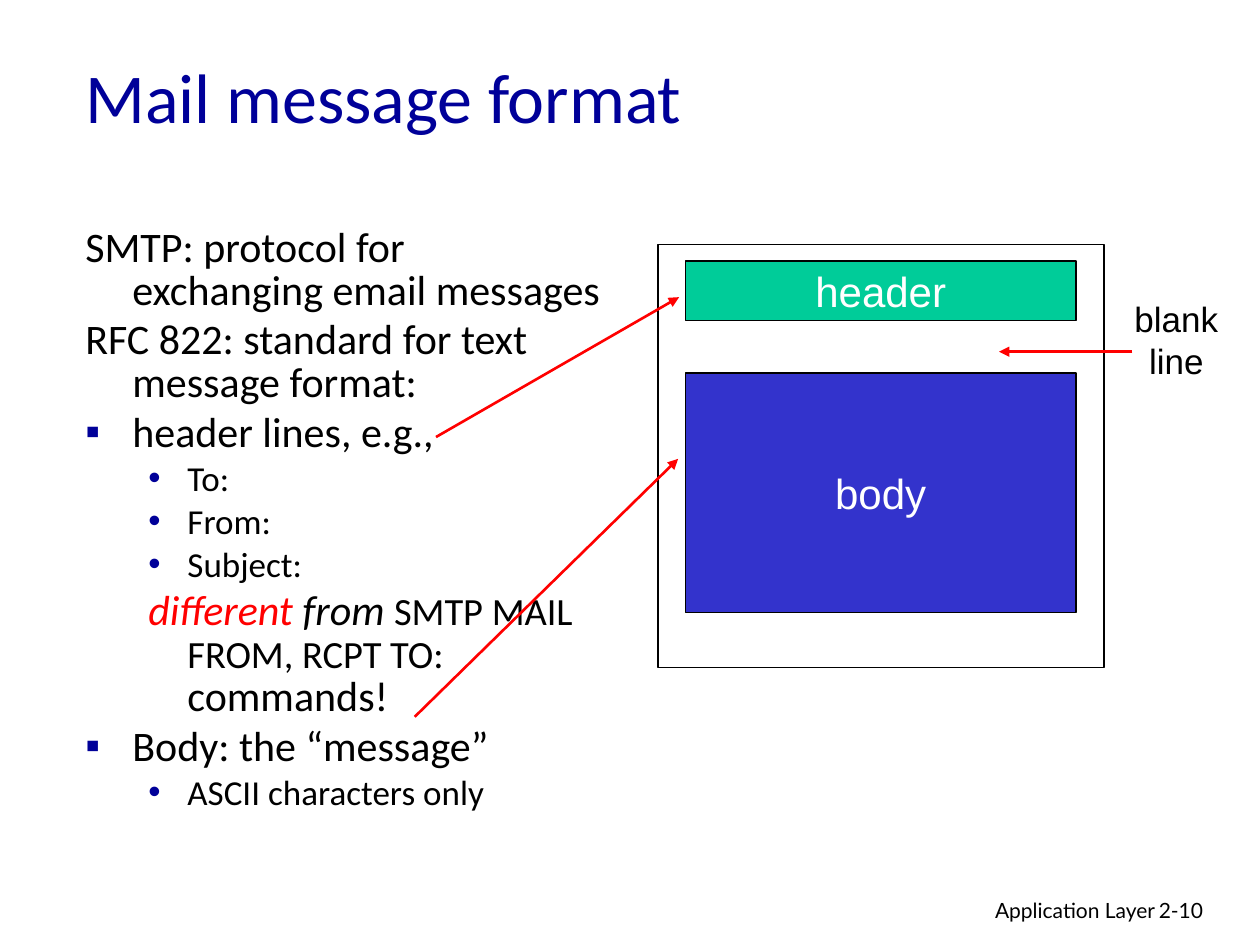
from lxml.etree import SubElement
from pptx import Presentation
from pptx.dml.color import RGBColor
from pptx.enum.shapes import MSO_CONNECTOR, MSO_SHAPE
from pptx.enum.text import MSO_ANCHOR, PP_ALIGN
from pptx.oxml.ns import qn
from pptx.util import Cm, Pt

BLACK = RGBColor(0x00, 0x00, 0x00)
WHITE = RGBColor(0xFF, 0xFF, 0xFF)
NAVY = RGBColor(0x00, 0x00, 0x99)
RED = RGBColor(0xFF, 0x00, 0x00)
GREEN = RGBColor(0x00, 0xCC, 0x99)
BLUE = RGBColor(0x33, 0x33, 0xCC)

TITLE = {"name": "Calibri", "size": Pt(40), "color": NAVY}
MAIN = {"name": "Calibri", "size": Pt(24), "color": BLACK}
SUB = {**MAIN, "size": Pt(20)}
COMMAND = {**MAIN, "size": Pt(22)}
ITALIC = {**MAIN, "italic": True}
WARNING = {**ITALIC, "color": RED}
BLOCK = {"name": "Arial", "size": Pt(24), "color": WHITE}
LABEL = {"name": "Arial", "size": Pt(20), "color": BLACK}
FOOTER = {"name": "Lato", "size": Pt(12), "color": BLACK}

# Left margin and hanging indent of each outline level
INDENTS = [(Cm(0.95), Cm(-0.95)), (Cm(2.06), Cm(-0.79))]

# Level, bullet, spans of text with their format
OUTLINE = [
    (0, None, [("SMTP: protocol for exchanging email messages", MAIN)]),
    (0, None, [("RFC 822: standard for text message format:", MAIN)]),
    (0, "▪", [("header lines, e.g.,", MAIN)]),
    (1, "•", [("To:", SUB)]),
    (1, "•", [("From:", SUB)]),
    (1, "•", [("Subject:", SUB)]),
    (1, None, [("different ", WARNING), ("from ", ITALIC),
               ("SMTP MAIL FROM, RCPT TO:", COMMAND), (" commands!", MAIN)]),
    (0, "▪", [("Body: the “message”", MAIN)]),
    (1, "•", [("ASCII characters only", SUB)]),
]


def add_span(para, text, style):
    span = para.add_run()
    span.text = text
    for name, value in style.items():
        if name == "color":
            span.font.color.rgb = value
        else:
            setattr(span.font, name, value)


def fill_lines(frame, lines, style, align):
    for index, line in enumerate(lines):
        para = frame.add_paragraph() if index else frame.paragraphs[0]
        para.alignment = align
        add_span(para, line, style)


def add_text(page, place, lines, style, align=PP_ALIGN.LEFT,
             anchor=MSO_ANCHOR.TOP, wrap=True):
    frame = page.shapes.add_textbox(*map(Cm, place)).text_frame
    frame.word_wrap = wrap
    frame.vertical_anchor = anchor
    fill_lines(frame, lines, style, align)


def set_bullet(para, level, bullet):
    """Give a paragraph its hanging indent and its bullet, if any."""
    properties = para._p.get_or_add_pPr()
    left, hanging = INDENTS[level]
    properties.set("marL", str(left))
    properties.set("indent", str(hanging))
    if bullet is None:
        SubElement(properties, qn("a:buNone"))
        return
    color = SubElement(properties, qn("a:buClr"))
    SubElement(color, qn("a:srgbClr"), val=str(NAVY))
    SubElement(properties, qn("a:buFont"), typeface="Arial")
    SubElement(properties, qn("a:buChar"), char=bullet)


def add_outline(page, place, items):
    frame = page.shapes.add_textbox(*map(Cm, place)).text_frame
    frame.word_wrap = True
    for index, (level, bullet, spans) in enumerate(items):
        para = frame.add_paragraph() if index else frame.paragraphs[0]
        set_bullet(para, level, bullet)
        para.level = level
        para.line_spacing = 0.85
        para.space_before = Pt(4 if index else 0)
        for text, style in spans:
            add_span(para, text, style)


def add_block(page, place, fill=None, text=None, weight=0.75):
    box = page.shapes.add_shape(MSO_SHAPE.RECTANGLE, *map(Cm, place))
    box.shadow.inherit = False
    box.line.color.rgb = BLACK
    box.line.width = Pt(weight)
    if fill is None:
        box.fill.background()
    else:
        box.fill.solid()
        box.fill.fore_color.rgb = fill
    if text:
        box.text_frame.word_wrap = False
        box.text_frame.vertical_anchor = MSO_ANCHOR.MIDDLE
        fill_lines(box.text_frame, [text], BLOCK, PP_ALIGN.CENTER)


def add_arrow(page, *ends):
    arrow = page.shapes.add_connector(MSO_CONNECTOR.STRAIGHT, *map(Cm, ends))
    arrow.line.color.rgb = RED
    arrow.line.width = Pt(1.5)
    SubElement(arrow.line._get_or_add_ln(), qn("a:tailEnd"), type="triangle")
    SubElement(arrow._element.spPr, qn("a:effectLst"))


def main():
    deck = Presentation()
    deck.slide_width, deck.slide_height = Cm(25.4), Cm(19.05)
    page = deck.slides.add_slide(deck.slide_layouts[6])

    add_text(page, (15.49, 17.96, 8.05, 0.79), ["Application Layer"], FOOTER,
             align=PP_ALIGN.RIGHT)
    add_text(page, (23.11, 17.96, 1.88, 0.76), ["2-10"], FOOTER)
    add_text(page, (1.47, 0.33, 21.59, 3.18), ["Mail message format"], TITLE,
             anchor=MSO_ANCHOR.MIDDLE)
    add_outline(page, (1.47, 4.47, 10.92, 12.9), OUTLINE)

    add_block(page, (13.82, 5.26, 7.87, 1.2), GREEN, "header")
    add_block(page, (13.82, 7.52, 7.87, 4.83), BLUE, "body")
    add_block(page, (13.26, 4.93, 8.99, 8.53), weight=1)
    add_text(page, (22.61, 5.87, 2.21, 1.96), ["blank", "line"], LABEL,
             align=PP_ALIGN.CENTER, wrap=False)

    add_arrow(page, 8.79, 8.81, 13.69, 5.99)
    add_arrow(page, 8.36, 14.45, 13.67, 9.25)
    add_arrow(page, 22.83, 7.09, 20.14, 7.09)

    deck.save("out.pptx")


if __name__ == "__main__":
    main()
